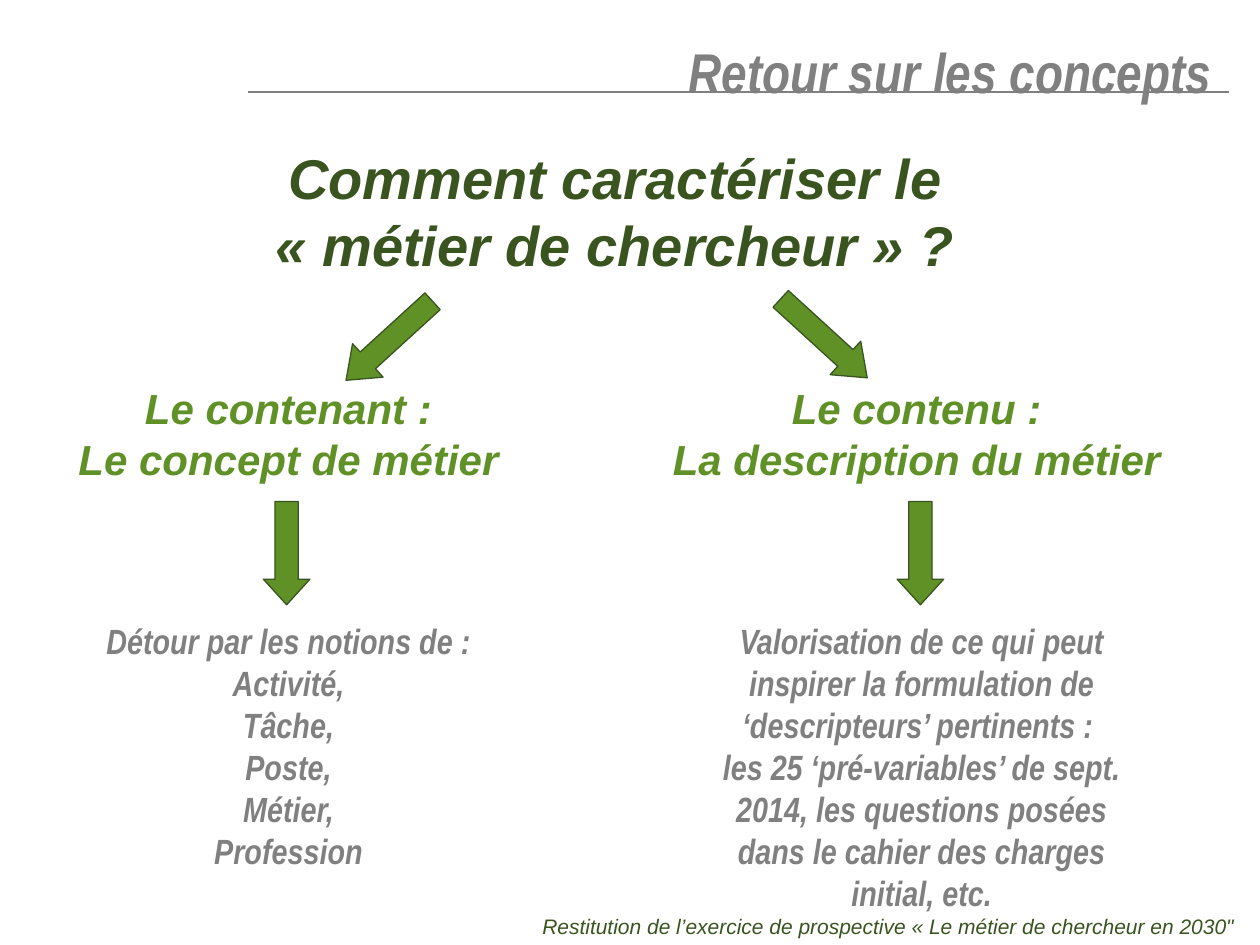
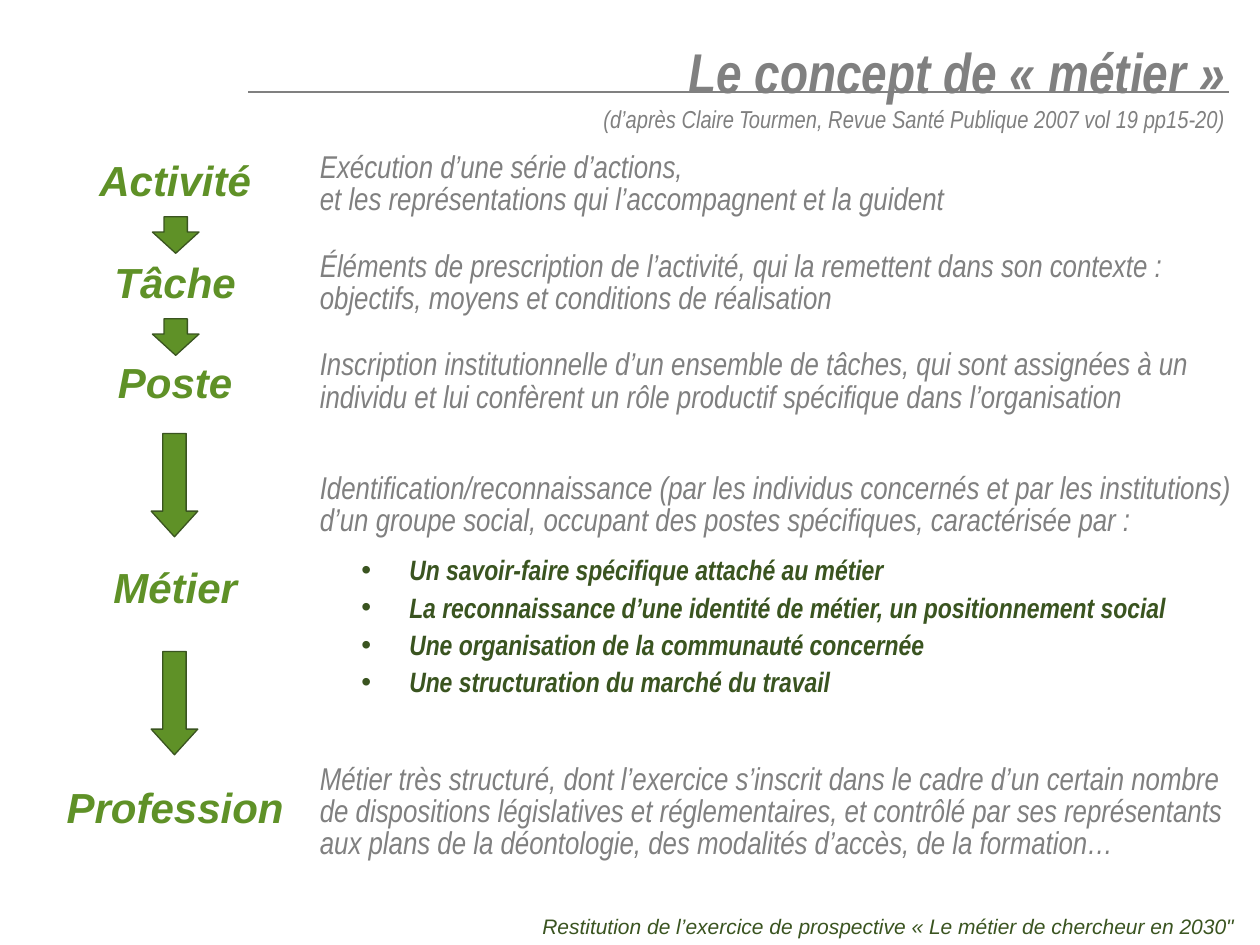
"""Build two slides on the concept of the researcher's profession."""
from lxml import etree
from pptx import Presentation
from pptx import util as u
from pptx.dml import color
from pptx.enum import shapes, text
from pptx.oxml import ns

COLORS = {"grey": "808080", "dark": "3A5420", "green": "5F9127", "white": "FFFFFF"}
LEFT, CENTER, RIGHT = text.PP_ALIGN.LEFT, text.PP_ALIGN.CENTER, text.PP_ALIGN.RIGHT

STYLES = {
    "title": dict(size=32, font="Arial Narrow", color="grey", bold=True, align=RIGHT),
    "footer": dict(size=12, font="Arial", color="dark", align=RIGHT),
    "question": dict(size=32, font="Arial", color="dark", bold=True, align=CENTER),
    "heading": dict(size=24, font="Arial", color="green", bold=True, align=CENTER),
    "detail": dict(size=20, font="Arial Narrow", color="grey", bold=True, align=CENTER),
    "definition": dict(size=18, font="Arial Narrow", color="grey", spacing=0.85),
    "citation": dict(size=14, font="Arial Narrow", color="grey", spacing=0.85),
    "criterion": dict(size=16, font="Arial Narrow", color="dark", bold=True,
                      spacing=0.9, after=4, bullet="•"),
}

FOOTER = "Restitution de l’exercice de prospective «\u00a0Le métier de chercheur en 2030\""
QUESTION = ["Comment caractériser le ", "«\u00a0métier\u00a0de chercheur » ? "]

BRANCHES = [
    {
        "heading": ["Le contenant :", "Le concept de métier"],
        "heading_span": (0.44, 3.7),
        "detail": ["Détour par les notions de : Activité,", "Tâche,", "Poste,", "Métier,",
                   "Profession"],
        "detail_span": (0.44, 3.7),
        "slanted": (2.91, 2.24, 47.6),
        "arrow_left": 2.09,
    },
    {
        "heading": ["Le contenu :", "La description du métier"],
        "heading_span": (5.23, 4.09),
        "detail": ["Valorisation de ce qui peut inspirer la formulation de "
                   "‘descripteurs’ pertinents : \vles 25 ‘pré-variables’ de sept. 2014, "
                   "les questions posées dans le cahier des charges initial, etc."],
        "detail_span": (5.45, 3.73),
        "slanted": (6.36, 2.22, 312.4),
        "arrow_left": 7.12,
    },
]

CITATION = "(d’après Claire Tourmen, Revue Santé Publique 2007 vol 19 pp15-20)"
NOTIONS = [
    ("Activité", 1.18, 1.16,
     ["Exécution d’une série d’actions, \vet les représentations qui l’accompagnent "
      "et la guident"]),
    ("Tâche", 1.99, 1.95,
     ["Éléments de prescription de l’activité, qui la remettent dans son contexte :",
      "objectifs, moyens et conditions de réalisation"]),
    ("Poste", 2.78, 2.73,
     ["Inscription institutionnelle d’un ensemble de tâches, qui sont assignées à un "
      "individu et lui confèrent un rôle productif spécifique dans l’organisation"]),
    ("Métier", 4.41, 3.71,
     ["Identification/reconnaissance (par les individus concernés et par les "
      "institutions) d’un groupe social, occupant des postes spécifiques, "
      "caractérisée par :"]),
    ("Profession", 6.15, 6.02,
     ["Métier très structuré, dont l’exercice s’inscrit dans le cadre d’un certain "
      "nombre de dispositions législatives et réglementaires, et contrôlé par ses "
      "représentants aux plans de la déontologie, des modalités d’accès, de la "
      "formation…"]),
]
CRITERIA = [
    "Un savoir-faire spécifique attaché au métier",
    "La reconnaissance d’une identité de métier, un positionnement social",
    "Une organisation de la communauté concernée",
    "Une structuration du marché du travail",
]
SHORT_ARROW = (0.37, 0.29, 0.58)
LONG_ARROW = (0.37, 0.82, 0.55)
SLANTED_ARROW = (0.36, 0.93, 0.65)
NOTION_ARROWS = [(1.21, 1.72, SHORT_ARROW), (1.21, 2.53, SHORT_ARROW),
                 (1.2, 3.44, LONG_ARROW), (1.2, 5.17, LONG_ARROW)]


def rgb(name):
    return color.RGBColor.from_string(COLORS[name])


def add_bullet(paragraph, character):
    properties = paragraph._p.get_or_add_pPr()
    properties.set("marL", str(u.Inches(0.38)))
    properties.set("indent", str(-u.Inches(0.38)))
    etree.SubElement(properties, ns.qn("a:buFont")).set("typeface", "Arial")
    etree.SubElement(properties, ns.qn("a:buChar")).set("char", character)


def add_text(slide, box, lines, style_name):
    style = STYLES[style_name]
    shape = slide.shapes.add_textbox(*map(u.Inches, box))
    frame = shape.text_frame
    frame.word_wrap = True
    for index, line in enumerate(lines):
        paragraph = frame.add_paragraph() if index else frame.paragraphs[0]
        paragraph.text = line
        if "bullet" in style:
            add_bullet(paragraph, style["bullet"])
        paragraph.alignment = style.get("align", LEFT)
        paragraph.line_spacing = style.get("spacing", 1.0)
        paragraph.space_after = u.Pt(style.get("after", 0))
        for run in paragraph.runs:
            run.font.name = style["font"]
            run.font.size = u.Pt(style["size"])
            run.font.bold = style.get("bold", False)
            run.font.italic = True
            run.font.color.rgb = rgb(style["color"])


def add_arrow(slide, left, top, kind, rotation=0):
    width, height, head = kind
    shape = slide.shapes.add_shape(shapes.MSO_SHAPE.DOWN_ARROW,
                                   *map(u.Inches, (left, top, width, height)))
    shape.adjustments[0] = 0.5
    shape.adjustments[1] = head
    shape.rotation = rotation
    shape.shadow.inherit = False
    shape.fill.solid()
    shape.fill.fore_color.rgb = rgb("green")
    shape.line.color.rgb = rgb("dark")
    shape.line.width = u.Pt(0.75)


def add_base_slide(presentation, title):
    slide = presentation.slides.add_slide(presentation.slide_layouts[6])
    slide.background.fill.solid()
    slide.background.fill.fore_color.rgb = rgb("white")
    rule = slide.shapes.add_connector(shapes.MSO_CONNECTOR.STRAIGHT,
                                      *map(u.Inches, (1.97, 0.73, 9.75, 0.73)))
    rule.line.color.rgb = rgb("grey")
    rule.line.width = u.Pt(0.75)
    etree.SubElement(rule._element.spPr, ns.qn("a:effectLst"))
    add_text(slide, (3.24, 7.2, 6.66, 0.3), [FOOTER], "footer")
    add_text(slide, (1.8, 0.25, 8.02, 0.63), [title], "title")
    return slide


def build_question_slide(presentation):
    slide = add_base_slide(presentation, "Retour sur les concepts ")
    add_text(slide, (0.7, 1.09, 8.49, 1.17), QUESTION, "question")
    for branch in BRANCHES:
        heading_left, heading_width = branch["heading_span"]
        detail_left, detail_width = branch["detail_span"]
        slanted_left, slanted_top, rotation = branch["slanted"]
        add_text(slide, (heading_left, 2.99, heading_width, 0.9),
                 branch["heading"], "heading")
        add_arrow(slide, slanted_left, slanted_top, SLANTED_ARROW, rotation)
        add_arrow(slide, branch["arrow_left"], 3.98, LONG_ARROW)
        add_text(slide, (detail_left, 4.87, detail_width, 2.1),
                 branch["detail"], "detail")


def build_notions_slide(presentation):
    slide = add_base_slide(presentation, "Le concept de «\u00a0métier\u00a0»")
    add_text(slide, (4.69, 0.81, 5.31, 0.3), [CITATION], "citation")
    for notion, notion_top, definition_top, definition in NOTIONS:
        add_text(slide, (0, notion_top, 2.78, 0.5), [notion], "heading")
        add_text(slide, (2.44, definition_top, 7.56, 0.61), definition, "definition")
    for left, top, kind in NOTION_ARROWS:
        add_arrow(slide, left, top, kind)
    add_text(slide, (2.77, 4.37, 7.23, 1.23), CRITERIA, "criterion")


def main():
    presentation = Presentation()
    presentation.slide_width = u.Inches(10)
    presentation.slide_height = u.Inches(7.5)
    build_question_slide(presentation)
    build_notions_slide(presentation)
    presentation.save("out.pptx")


if __name__ == "__main__":
    main()
